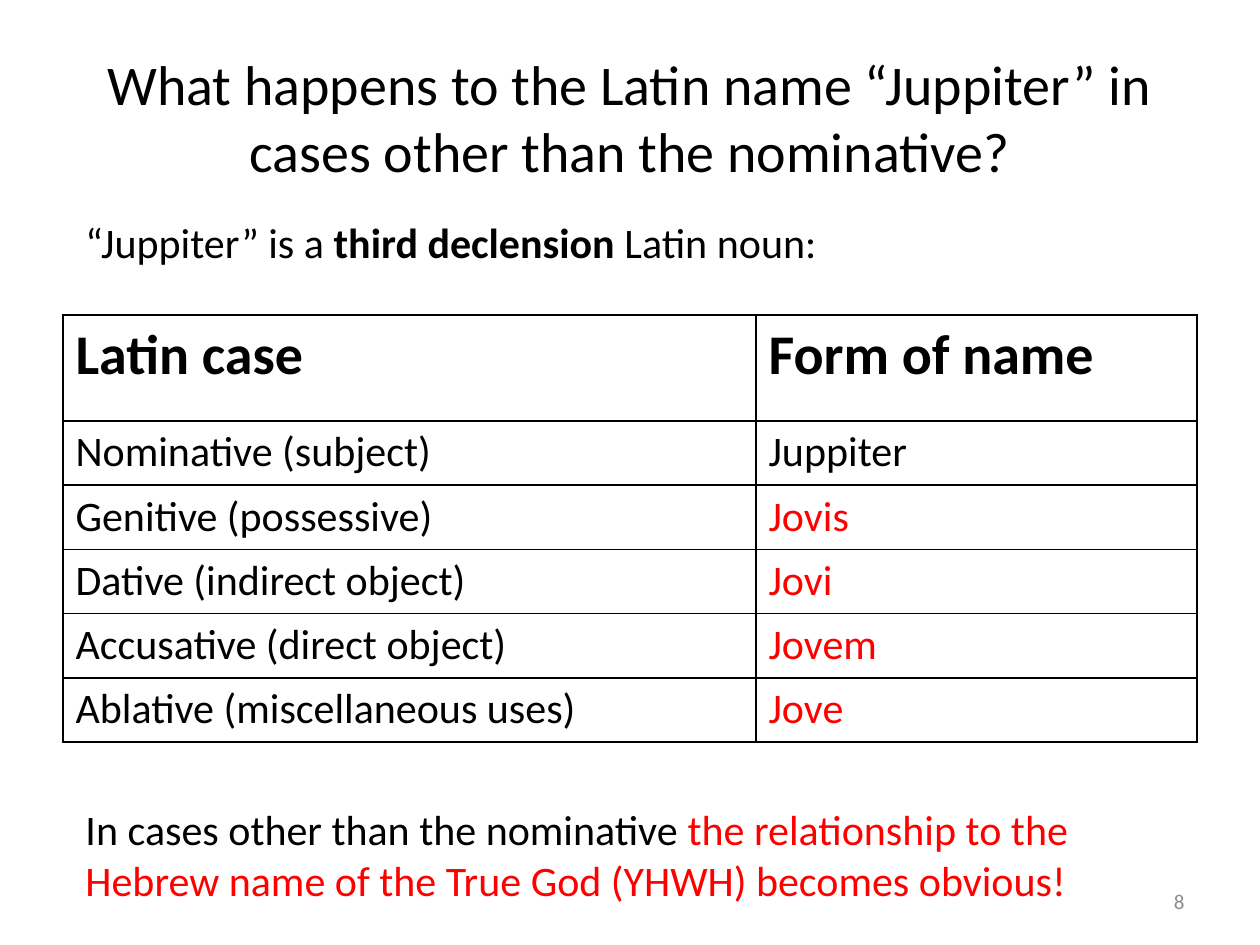
import pptx
import pptx.util
import pptx.dml.color
import pptx.enum.text
import pptx.oxml
from pptx.util import Inches

# Content
BLACK, RED, GREY, WHITE = "000000", "FF0000", "8C8C8C", "FFFFFF"
TITLE = "What happens to the Latin name “Juppiter” in cases other than the nominative?"
HEAD = ("Latin case", "Form of name")
CASES = [
    ("Nominative (subject)", "Juppiter", BLACK),
    ("Genitive (possessive)", "Jovis", RED),
    ("Dative (indirect object)", "Jovi", RED),
    ("Accusative (direct object)", "Jovem", RED),
    ("Ablative (miscellaneous uses)", "Jove", RED),
]
# Each run: text, bold, colour
INTRO = [("“Juppiter” is a ", False, BLACK),
         ("third declension ", True, BLACK),
         ("Latin noun:", False, BLACK)]
CLOSE = [("In cases other than the nominative ", False, BLACK),
         ("the relationship to the Hebrew name of the True God (YHWH) "
          "becomes obvious!", False, RED)]
NUMBER = [("8", False, GREY)]
COLS = (5.5, 3.5)
HEAD_H, ROW_H = 0.84, 0.51

ALIGN = pptx.enum.text.PP_ALIGN
ANCHOR = pptx.enum.text.MSO_ANCHOR


def color(code):
    return pptx.dml.color.RGBColor.from_string(code)


def style(font, size, code=BLACK, bold=False):
    font.name = "Calibri"
    font.size = pptx.util.Pt(size)
    font.bold = bold
    font.color.rgb = color(code)


def place(shape, left, top, width, height):
    shape.left, shape.top = Inches(left), Inches(top)
    shape.width, shape.height = Inches(width), Inches(height)


def add_text(slide, box, runs, size=24, align=ALIGN.LEFT, anchor=ANCHOR.TOP):
    frame = slide.shapes.add_textbox(*map(Inches, box)).text_frame
    frame.word_wrap = True
    frame.vertical_anchor = anchor
    para = frame.paragraphs[0]
    para.alignment = align
    for text, bold, code in runs:
        run = para.add_run()
        run.text = text
        style(run.font, size, code, bold)


def add_border(cell):
    props = cell._tc.get_or_add_tcPr()
    for spot, side in enumerate(("lnL", "lnR", "lnT", "lnB")):
        props.insert(spot, pptx.oxml.parse_xml(
            f'<a:{side} w="12700" xmlns:a="http://schemas.openxmlformats.org/'
            f'drawingml/2006/main"><a:solidFill><a:srgbClr val="{BLACK}"/>'
            f'</a:solidFill></a:{side}>'))


def fill_cell(cell, text, size, code, bold):
    cell.text = text
    style(cell.text_frame.paragraphs[0].font, size, code, bold)
    cell.fill.solid()
    cell.fill.fore_color.rgb = color(WHITE)
    add_border(cell)


deck = pptx.Presentation()
deck.slide_width, deck.slide_height = Inches(10), Inches(7.5)
slide = deck.slides.add_slide(deck.slide_layouts[5])

# Title
title = slide.shapes.title
place(title, 0.5, 0.3, 9, 1.25)
title.text = TITLE
title.text_frame.vertical_anchor = ANCHOR.MIDDLE
para = title.text_frame.paragraphs[0]
para.alignment = ALIGN.CENTER
style(para.font, 32)

# Table of cases
high = HEAD_H + ROW_H * len(CASES)
table = slide.shapes.add_table(
    len(CASES) + 1, len(COLS), Inches(0.5), Inches(2.5),
    Inches(sum(COLS)), Inches(high)).table
for col, width in zip(table.columns, COLS):
    col.width = Inches(width)
for i, row in enumerate(table.rows):
    row.height = Inches(ROW_H if i else HEAD_H)
for col, text in enumerate(HEAD):
    fill_cell(table.cell(0, col), text, 32, BLACK, True)
for row, (case, form, code) in enumerate(CASES, 1):
    fill_cell(table.cell(row, 0), case, 24, BLACK, False)
    fill_cell(table.cell(row, 1), form, 24, code, False)

# Remarks above and below the table, then the slide number
add_text(slide, (0.58, 1.67, 8.75, 0.51), INTRO)
add_text(slide, (0.58, 6.33, 8.75, 0.91), CLOSE)
add_text(slide, (7.17, 6.95, 2.33, 0.4), NUMBER, 12, ALIGN.RIGHT, ANCHOR.MIDDLE)

deck.save("out.pptx")
